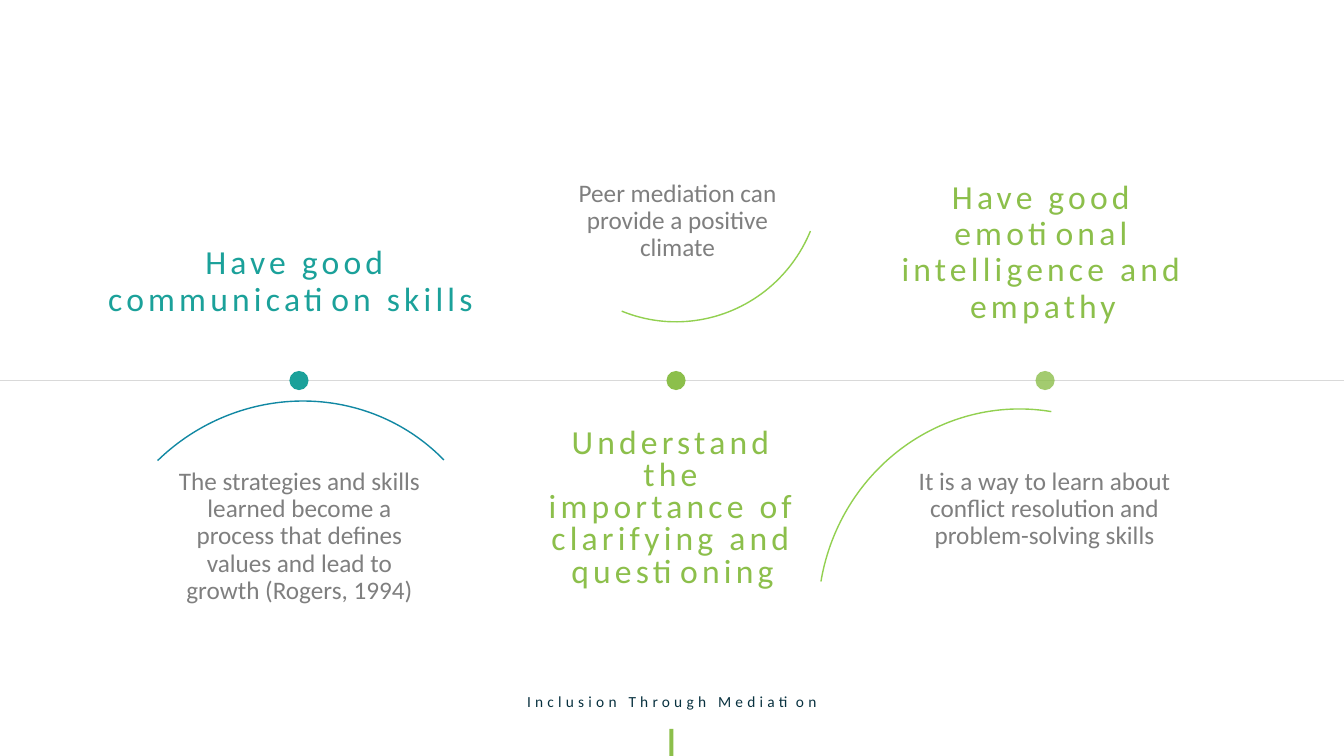
"""Build the peer mediation timeline slide."""
from dataclasses import dataclass

from lxml.etree import SubElement
from pptx import Presentation
from pptx.dml.color import RGBColor
from pptx.enum.shapes import MSO_CONNECTOR, MSO_SHAPE
from pptx.enum.text import MSO_ANCHOR, PP_ALIGN
from pptx.oxml.ns import qn
from pptx.util import Pt

PX = 9144


@dataclass(frozen=True)
class Theme:
    font: str = "Calibri"
    teal: str = "1BA19A"
    green: str = "8CBF4B"
    bright: str = "92D050"
    blue: str = "1188A3"
    navy: str = "08313F"
    gray: str = "7F7F7F"
    rule: str = "D9D9D9"
    heading: int = 24
    body: int = 18
    footer: int = 11


def add_shape(kind, box, fill=None, line=None, rotation=0):
    sp = s.shapes.add_shape(kind, *(v * PX for v in box))
    sp.shadow.inherit = False
    sp.rotation = rotation
    if fill:
        sp.fill.solid()
        sp.fill.fore_color.rgb = RGBColor.from_string(fill)
    else:
        sp.fill.background()
    if line:
        sp.line.color.rgb = RGBColor.from_string(line)
        sp.line.width = Pt(1)
    else:
        sp.line.fill.background()
    return sp


def add_text(box, text, size, color, spacing=0, leading=1.0):
    tf = s.shapes.add_textbox(*(v * PX for v in box)).text_frame
    tf.word_wrap = True
    tf.vertical_anchor = MSO_ANCHOR.TOP
    p = tf.paragraphs[0]
    p.alignment = PP_ALIGN.CENTER
    p.line_spacing = leading
    r = p.add_run()
    r.text = text
    r.font.name = theme.font
    r.font.size = Pt(size)
    r.font.color.rgb = RGBColor.from_string(color)
    if spacing:
        r.font._element.set("spc", str(spacing * 100))


theme = Theme()
prs = Presentation()
prs.slide_width, prs.slide_height = 1333 * PX, 750 * PX
s = prs.slides.add_slide(prs.slide_layouts[6])

axis = s.shapes.add_connector(MSO_CONNECTOR.STRAIGHT, 0, 377 * PX, 1333 * PX, 377 * PX)
axis.line.color.rgb = RGBColor.from_string(theme.rule)
axis.line.width = Pt(0.5)
SubElement(axis._element.spPr, qn("a:effectLst"))

for x, color, opacity in [(287, theme.teal, 100), (661, theme.green, 100), (1027, theme.green, 80)]:
    dot = add_shape(MSO_SHAPE.OVAL, (x, 368, 19, 19), fill=color)
    if opacity < 100:
        clr = dot._element.spPr.find(qn("a:solidFill")).find(qn("a:srgbClr"))
        SubElement(clr, qn("a:alpha")).set("val", str(opacity * 1000))

add_shape(MSO_SHAPE.RECTANGLE, (652, 735, 28, 4), fill=theme.green, rotation=270)
add_text((1, 682, 1331, 29), "Inclusion Through Mediation", theme.footer, theme.navy, spacing=3)

for box, text in [
    ((160, 460, 274, 171),
     "The strategies and skills learned become a process that defines values and lead to growth (Rogers, 1994)"),
    ((535, 174, 274, 135), "Peer mediation can provide a positive climate"),
    ((899, 460, 274, 171), "It is a way to learn about conflict resolution and problem-solving skills"),
]:
    add_text(box, text, theme.body, theme.gray, leading=0.9)

for box, text, color, leading in [
    ((90, 239, 408, 106), "Have good communication skills ", theme.teal, 0.9),
    ((530, 420, 274, 190), "Understand the importance of clarifying and questioning", theme.green, 0.8),
    ((863, 174, 343, 171), "Have good emotional intelligence and empathy", theme.green, 0.9),
]:
    add_text(box, text, theme.heading, color, spacing=3, leading=leading)

for box, rotation, color in [
    ((90, 401, 408, 395), 315.8, theme.blue),
    ((805, 412, 408, 395), 279.5, theme.bright),
    ((527, 32, 289, 286), 112.3, theme.bright),
]:
    add_shape(MSO_SHAPE.ARC, box, line=color, rotation=rotation)

prs.save("out.pptx")
